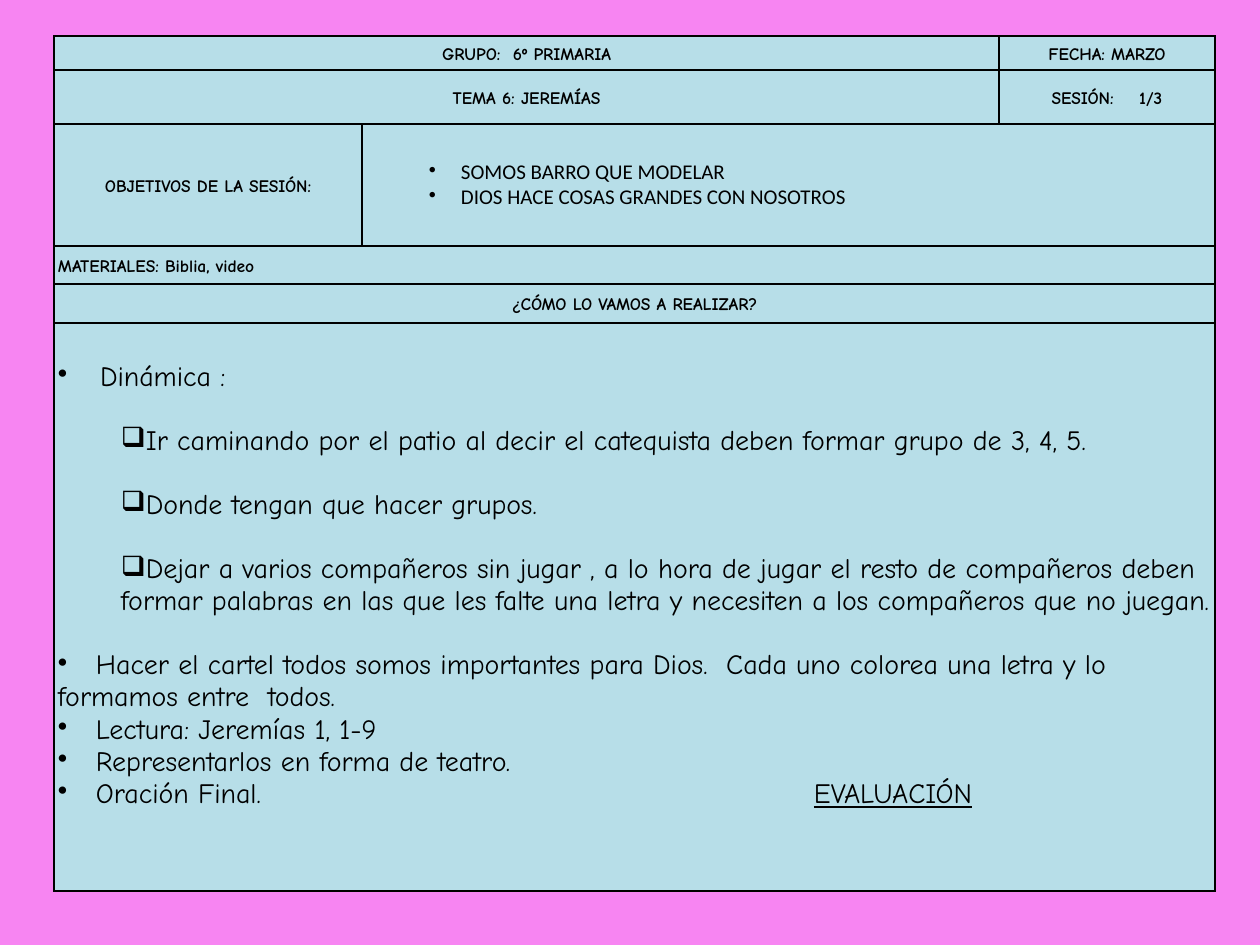
from lxml.etree import SubElement
from pptx import Presentation
from pptx.dml.color import RGBColor
from pptx.enum.text import MSO_ANCHOR as Anchor, PP_ALIGN as Align
from pptx.oxml import parse_xml
from pptx.oxml.ns import nsdecls, qn
from pptx.util import Emu, Pt

PX = 914400 // 126
PINK = RGBColor(0xF7, 0x85, 0xF2)
BLUE = RGBColor(0xB7, 0xDE, 0xE8)
BLACK = RGBColor(0, 0, 0)

# Lengths in px
LEFT, TOP = 54, 36
COLUMNS = [308, 637, 216]
ROWS = [34, 54, 122, 38, 39, 568]
INSET, GAP = 4, 32

# Paragraph styles
HEADING = dict(font="Comic Neue", size=10, bold=True, align=Align.CENTER, line=1.15)
LABEL = {**HEADING, "align": Align.LEFT}
GOAL = dict(font="Calibri", size=12, left=95, indent=-32, bullet="•")
STEP = dict(font="Comic Neue", size=16, bullet="•", tabs=[38, 756])
FIRST_STEP = {**STEP, "tabs": [42]}
SPACED_STEP = {**STEP, "before": GAP}
SUBSTEP = dict(font="Comic Neue", size=16, left=63, bullet="❑", before=GAP)

# (row, column, columns spanned, paragraphs); a run is (text, extra attributes)
CELLS = [
    (0, 0, 2, [(HEADING, [("GRUPO:  6º PRIMARIA", {})])]),
    (0, 2, 1, [(HEADING, [("FECHA: MARZO", {})])]),
    (1, 0, 2, [(HEADING, [("TEMA 6: JEREMÍAS", {})])]),
    (1, 2, 1, [(HEADING, [("SESIÓN:", {}), (" ", {"spc": "1100"}), ("1/3", {})])]),
    (2, 0, 1, [(HEADING, [("OBJETIVOS DE LA SESIÓN:", {})])]),
    (2, 1, 2, [
        (GOAL, [("SOMOS BARRO QUE MODELAR", {})]),
        (GOAL, [("DIOS HACE COSAS GRANDES CON NOSOTROS", {})]),
    ]),
    (3, 0, 3, [(LABEL, [("MATERIALES: Biblia, video", {})])]),
    (4, 0, 3, [(HEADING, [("¿CÓMO LO VAMOS A REALIZAR?", {})])]),
    (5, 0, 3, [
        (FIRST_STEP, [("\tDinámica :", {})]),
        (SUBSTEP, [("Ir caminando por el patio al decir el catequista deben formar "
                    "grupo de 3, 4, 5.", {})]),
        (SUBSTEP, [("Donde tengan que hacer grupos.", {})]),
        (SUBSTEP, [("Dejar a varios compañeros sin jugar , a lo hora de jugar el resto "
                    "de compañeros deben formar palabras en las que les falte una letra "
                    "y necesiten a los compañeros que no juegan.", {})]),
        (SPACED_STEP, [("\tHacer el cartel todos somos importantes para Dios.  Cada uno "
                        "colorea una letra y lo formamos entre  todos.", {})]),
        (STEP, [("\tLectura: Jeremías 1, 1-9", {})]),
        (STEP, [("\tRepresentarlos en forma de teatro.", {})]),
        (STEP, [("\tOración Final.\t", {}), ("EVALUACIÓN", {"u": "sng"})]),
    ]),
]


def px(length):
    return Emu(length * PX)


def format_cell(cell):
    cell.fill.solid()
    cell.fill.fore_color.rgb = BLUE
    cell.margin_left = cell.margin_right = px(INSET)
    cell.margin_top = cell.margin_bottom = 0
    cell.vertical_anchor = Anchor.MIDDLE
    properties = cell._tc.get_or_add_tcPr()
    for position, side in enumerate("LRTB"):
        properties.insert(position, parse_xml(
            f'<a:ln{side} {nsdecls("a")} w="12700"><a:solidFill>'
            f'<a:srgbClr val="{BLACK}"/></a:solidFill></a:ln{side}>'))


def write_paragraph(paragraph, style, runs):
    paragraph.alignment = style.get("align", Align.LEFT)
    if "line" in style:
        paragraph.line_spacing = style["line"]
    if "before" in style:
        paragraph.space_before = px(style["before"])
    properties = paragraph._p.get_or_add_pPr()
    properties.set("marL", str(px(style.get("left", 0))))
    properties.set("indent", str(px(style.get("indent", 0))))
    if "bullet" in style:
        SubElement(properties, qn("a:buChar"), char=style["bullet"])
    if "tabs" in style:
        tab_list = SubElement(properties, qn("a:tabLst"))
        for stop in style["tabs"]:
            SubElement(tab_list, qn("a:tab"), pos=str(px(stop)), algn="l")
    for text, attributes in runs:
        run = paragraph.add_run()
        run.text = text
        run.font.name = style["font"]
        run.font.size = Pt(style["size"])
        run.font.bold = style.get("bold", False)
        run.font.color.rgb = BLACK
        for name, value in attributes.items():
            run._r.get_or_add_rPr().set(name, value)


presentation = Presentation()
presentation.slide_width, presentation.slide_height = px(1260), px(945)
slide = presentation.slides.add_slide(presentation.slide_layouts[6])
slide.background.fill.solid()
slide.background.fill.fore_color.rgb = PINK

# Session table
table = slide.shapes.add_table(
    len(ROWS), len(COLUMNS), px(LEFT), px(TOP), px(sum(COLUMNS)), px(sum(ROWS))).table
table.first_row = table.horz_banding = False
for column, width in zip(table.columns, COLUMNS):
    column.width = px(width)
for row, height in zip(table.rows, ROWS):
    row.height = px(height)
for cell in table.iter_cells():
    format_cell(cell)

# Cell texts
for row, column, span, paragraphs in CELLS:
    cell = table.cell(row, column)
    if span > 1:
        cell.merge(table.cell(row, column + span - 1))
    frame = cell.text_frame
    for number, (style, runs) in enumerate(paragraphs):
        paragraph = frame.add_paragraph() if number else frame.paragraphs[0]
        write_paragraph(paragraph, style, runs)

# The activity plan starts below the top of its cell
plan = table.cell(5, 0)
plan.vertical_anchor = Anchor.TOP
plan.margin_top = px(38)

presentation.save("out.pptx")
